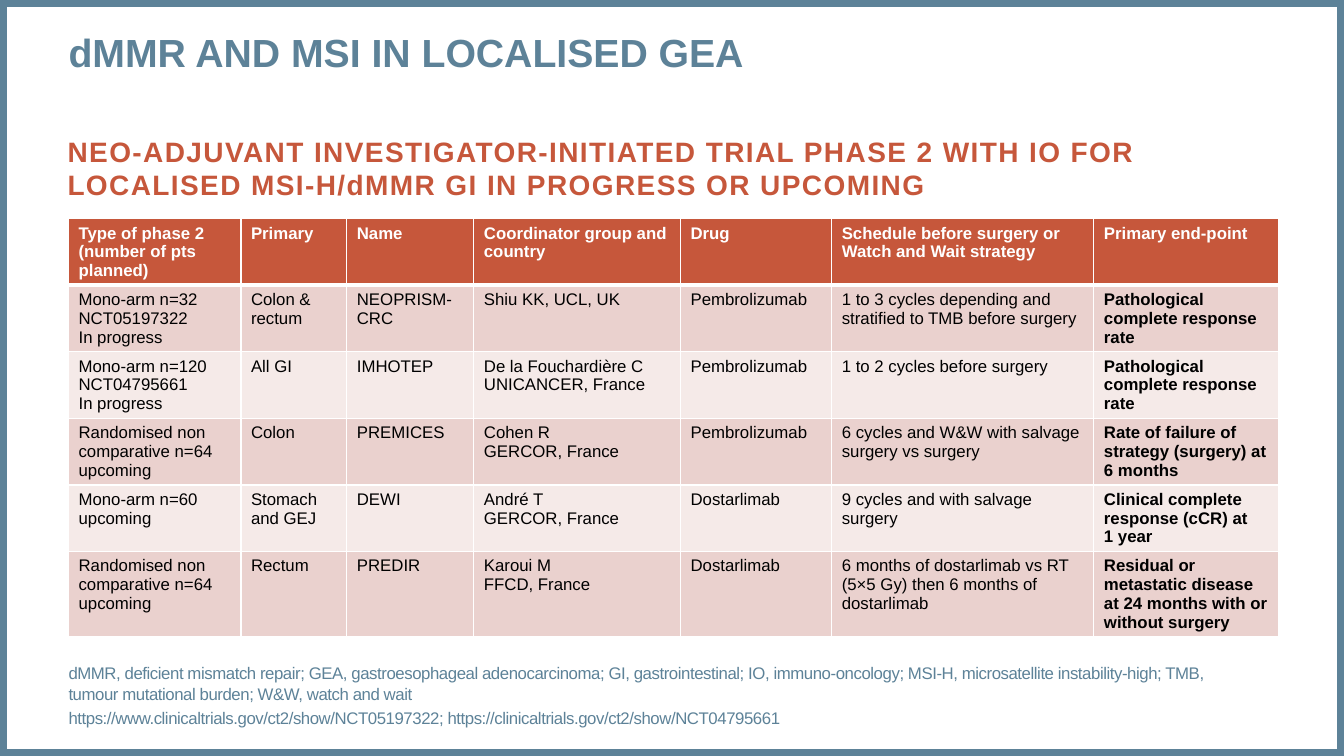
import copy

import lxml.etree
import pptx
import pptx.dml.color
import pptx.enum.shapes
import pptx.enum.text
import pptx.oxml.ns
import pptx.util

WIDTH, HEIGHT = 13.33, 7.5
LEFT = 0.68
BLUE, RED, WHITE, BLACK = "5D8298", "C6573B", "FFFFFF", "000000"
BANDS = ["EAD1CE", "F5EAE8"]

TITLE = "dMMR AND MSI IN LOCALISED GEA"
SUBTITLE = ("NEO-ADJUVANT INVESTIGATOR-INITIATED TRIAL PHASE 2 WITH IO FOR "
            "LOCALISED MSI-H/dMMR GI IN PROGRESS OR UPCOMING")
FOOTNOTES = [
    "dMMR, deficient mismatch repair; GEA, gastroesophageal adenocarcinoma; "
    "GI, gastrointestinal; IO, immuno-oncology; MSI-H, microsatellite instability-high; "
    "TMB, tumour mutational burden; W&W, watch and wait",
    "https://www.clinicaltrials.gov/ct2/show/NCT05197322; "
    "https://clinicaltrials.gov/ct2/show/NCT04795661",
]
COLUMNS = [1.71, 1.05, 1.26, 2.05, 1.5, 2.6, 1.83]
ROW_HEIGHT = 0.41
TRIALS = [
    ("Type of phase 2 (number of pts planned)", "Primary", "Name",
     "Coordinator group and country", "Drug",
     "Schedule before surgery or Watch and Wait strategy", "Primary end-point"),
    ("Mono-arm n=32 NCT05197322\nIn progress", "Colon &\nrectum", "NEOPRISM-\nCRC",
     "Shiu KK, UCL, UK", "Pembrolizumab",
     "1 to 3 cycles depending and stratified to TMB before surgery",
     "Pathological complete response rate"),
    ("Mono-arm n=120 NCT04795661\nIn progress", "All GI", "IMHOTEP",
     "De la Fouchardière C UNICANCER, France", "Pembrolizumab",
     "1 to 2 cycles before surgery", "Pathological complete response rate"),
    ("Randomised non comparative n=64 upcoming", "Colon", "PREMICES",
     "Cohen R\nGERCOR, France", "Pembrolizumab",
     "6 cycles and W&W with salvage surgery vs surgery",
     "Rate of failure of strategy (surgery) at 6 months"),
    ("Mono-arm n=60 upcoming", "Stomach and GEJ", "DEWI",
     "André T\nGERCOR, France", "Dostarlimab",
     "9 cycles and with salvage surgery",
     "Clinical complete response (cCR) at\n1 year"),
    ("Randomised non comparative n=64 upcoming", "Rectum", "PREDIR",
     "Karoui M\nFFCD, France", "Dostarlimab",
     "6 months of dostarlimab vs RT (5×5 Gy) then 6 months of dostarlimab",
     "Residual or metastatic disease at 24 months with or without surgery"),
]


def rgb(value):
    return pptx.dml.color.RGBColor.from_string(value)


def apply(target, values):
    for name, value in values.items():
        setattr(target, name, value)


def write(para, text, size, color, bold=False, tracking=0, **layout):
    para.text = text
    apply(para, {"alignment": pptx.enum.text.PP_ALIGN.LEFT, **layout})
    for span in para.runs:
        apply(span.font, {"name": "Arial", "size": pptx.util.Pt(size), "bold": bold})
        span.font.color.rgb = rgb(color)
        if tracking:
            span._r.get_or_add_rPr().set("spc", str(tracking))
    for line_break in para._p.findall(pptx.oxml.ns.qn("a:br")):
        line_break.append(copy.deepcopy(para.runs[0]._r.rPr))


def place(box, left, top, width, height, anchor):
    apply(box, {"left": pptx.util.Inches(left), "top": pptx.util.Inches(top),
                "width": pptx.util.Inches(width), "height": pptx.util.Inches(height)})
    apply(box.text_frame, {"margin_left": 0, "margin_top": 0, "margin_right": 0,
                           "margin_bottom": 0, "word_wrap": True,
                           "auto_size": pptx.enum.text.MSO_AUTO_SIZE.NONE,
                           "vertical_anchor": anchor})
    return box.text_frame


def add_border(cell, side, points):
    tag = pptx.oxml.ns.qn
    line = lxml.etree.SubElement(cell._tc.get_or_add_tcPr(), tag("a:ln" + side),
                                 w=str(pptx.util.Pt(points)))
    fill = lxml.etree.SubElement(line, tag("a:solidFill"))
    lxml.etree.SubElement(fill, tag("a:srgbClr"), val=WHITE)


def add_frame(page):
    frame = page.shapes.add_shape(pptx.enum.shapes.MSO_SHAPE.RECTANGLE, 0, 0,
                                  pptx.util.Inches(WIDTH), pptx.util.Inches(HEIGHT))
    frame.shadow.inherit = False
    frame.fill.background()
    frame.line.color.rgb = rgb(BLUE)
    frame.line.width = pptx.util.Pt(10)


def add_trials(page):
    table = page.shapes.add_table(
        len(TRIALS), len(COLUMNS), pptx.util.Inches(LEFT), pptx.util.Inches(2.17),
        pptx.util.Inches(sum(COLUMNS)), pptx.util.Inches(ROW_HEIGHT * len(TRIALS))).table
    for column, width in zip(table.columns, COLUMNS):
        column.width = pptx.util.Inches(width)
    for r, trial in enumerate(TRIALS):
        for c, text in enumerate(trial):
            cell = table.cell(r, c)
            header = r == 0
            for side in "LRTB":
                heavy = (r, side) in [(0, "B"), (1, "T")]
                add_border(cell, side, 3 if heavy else 1)
            cell.fill.solid()
            cell.fill.fore_color.rgb = rgb(RED if header else BANDS[(r - 1) % 2])
            write(cell.text_frame.paragraphs[0], text, 12, WHITE if header else BLACK,
                  bold=header or c == len(COLUMNS) - 1)


def main():
    deck = pptx.Presentation()
    apply(deck, {"slide_width": pptx.util.Inches(WIDTH),
                 "slide_height": pptx.util.Inches(HEIGHT)})
    page = deck.slides.add_slide(deck.slide_layouts[5])
    anchors = pptx.enum.text.MSO_ANCHOR
    add_frame(page)

    title = place(page.shapes.title, LEFT, 0.28, 11.99, 0.94, anchors.TOP)
    write(title.paragraphs[0], TITLE, 28, BLUE, bold=True)

    subtitle = place(page.shapes.add_textbox(0, 0, 0, 0), 0.67, 1.33, 12, 0.77, anchors.TOP)
    write(subtitle.paragraphs[0], SUBTITLE, 20, RED, bold=True, tracking=100,
          line_spacing=pptx.util.Pt(24))

    add_trials(page)

    notes = place(page.shapes.add_textbox(0, 0, 0, 0), LEFT, 6.82, 11.74, 0.4, anchors.BOTTOM)
    for i, text in enumerate(FOOTNOTES):
        para = notes.add_paragraph() if i else notes.paragraphs[0]
        write(para, text, 12, BLUE, tracking=-30, space_before=pptx.util.Pt(3 if i else 0))

    deck.save("out.pptx")


if __name__ == "__main__":
    main()
